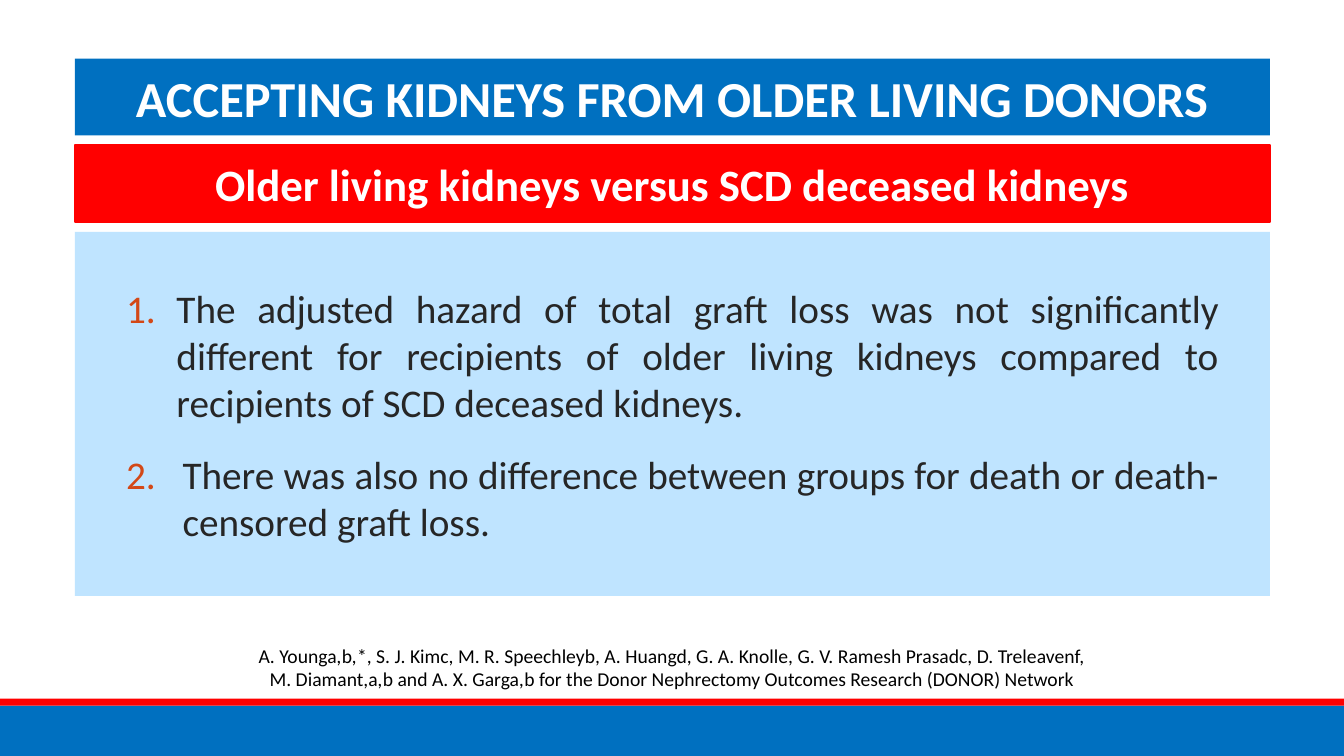
from lxml.etree import SubElement
from pptx import Presentation
from pptx.dml.color import RGBColor
from pptx.enum.shapes import MSO_SHAPE
from pptx.enum.text import MSO_ANCHOR, MSO_AUTO_SIZE, PP_ALIGN
from pptx.oxml.ns import qn
from pptx.util import Inches, Pt

BLUE, RED, PALE, WHITE = "0070C0", "FF0000", "BFE4FF", "FFFFFF"
FONT = "Calibri"

deck = Presentation()
deck.slide_width, deck.slide_height = Inches(13.33), Inches(7.5)
column, row = deck.slide_width / 100, deck.slide_height / 100
slide = deck.slides.add_slide(deck.slide_layouts[1])


def rgb(code):
    return RGBColor.from_string(code)


def style(paragraph, size, color, align, bold=False):
    paragraph.alignment = align
    paragraph.font.name = FONT
    paragraph.font.size = Pt(size)
    paragraph.font.bold = bold
    paragraph.font.color.rgb = rgb(color)


left, width = 5.58, 88.9
top, bar_height, gap = 7.75, 10.15, 1.32
pitch = bar_height + gap

for color, stripe_top, stripe_height in ((BLUE, 93.33, 6.67), (RED, 92.4, 0.93)):
    stripe = slide.shapes.add_shape(
        MSO_SHAPE.RECTANGLE, 0, int(stripe_top * row),
        deck.slide_width, int(stripe_height * row))
    stripe.shadow.inherit = False
    stripe.fill.solid()
    stripe.fill.fore_color.rgb = rgb(color)
    stripe.line.fill.background()

heading = slide.shapes.title
subheading = slide.shapes.add_shape(MSO_SHAPE.RECTANGLE, 0, 0, 0, 0)
subheading.shadow.inherit = False
subheading.line.color.rgb = rgb(RED)
subheading.line.width = Pt(1.25)

bars = (
    (heading, "ACCEPTING KIDNEYS FROM OLDER LIVING DONORS", 36, BLUE),
    (subheading, "Older living kidneys versus SCD deceased kidneys", 32, RED),
)
for index, (bar, wording, size, color) in enumerate(bars):
    bar.left, bar.top = int(left * column), int((top + index * pitch) * row)
    bar.width, bar.height = int(width * column), int(bar_height * row)
    bar.fill.solid()
    bar.fill.fore_color.rgb = rgb(color)
    frame = bar.text_frame
    frame.text = wording
    frame.word_wrap = True
    frame.auto_size = MSO_AUTO_SIZE.NONE
    frame.vertical_anchor = MSO_ANCHOR.MIDDLE
    frame.margin_left = frame.margin_right = int(3.2 * column)
    frame.margin_top = frame.margin_bottom = 0
    style(frame.paragraphs[0], size, WHITE, PP_ALIGN.CENTER, bold=True)

findings = slide.placeholders[1]
findings.left, findings.top = int(left * column), int((top + 2 * pitch) * row)
findings.width, findings.height = int(width * column), int(48.15 * row)
findings.fill.solid()
findings.fill.fore_color.rgb = rgb(PALE)
frame = findings.text_frame
frame.auto_size = MSO_AUTO_SIZE.NONE
frame.vertical_anchor = MSO_ANCHOR.TOP
frame.margin_left = frame.margin_right = int(3.8 * column)
frame.margin_top = int(6.9 * row)
frame.text = (
    "The adjusted hazard of total graft loss was not significantly different "
    "for recipients of older living kidneys compared to recipients of SCD "
    "deceased kidneys.\n"
    "There was also no difference between groups for death or "
    "death-censored graft loss.")
for number, (finding, indent, space) in enumerate(
        zip(frame.paragraphs, (0.5, 0.56), (0, 18)), start=1):
    style(finding, 28, "262626", PP_ALIGN.JUSTIFY)
    finding.space_before = Pt(space)
    properties = finding._p.get_or_add_pPr()
    properties.set("marL", str(Inches(indent)))
    properties.set("indent", str(-Inches(indent)))
    bullet_color = SubElement(properties, qn("a:buClr"))
    SubElement(bullet_color, qn("a:srgbClr"), val="D34817")
    SubElement(properties, qn("a:buFont"), typeface="+mj-lt")
    SubElement(properties, qn("a:buAutoNum"), type="arabicPeriod", startAt=str(number))
    properties.append(properties.find(qn("a:defRPr")))

authors = slide.shapes.add_textbox(
    int(17.8 * column), int(84.5 * row), int(64.4 * column), int(7.6 * row))
authors.text_frame.word_wrap = True
credit = authors.text_frame.paragraphs[0]
style(credit, 14, "000000", PP_ALIGN.CENTER)
names = (
    "A. Younga", "b",
    "*, S. J. Kimc, M. R. Speechleyb, A. Huangd, G. A. Knolle, "
    "G. V. Ramesh Prasadc, D. Treleavenf, M. Diamant,a",
    "b and A. X. Garga",
    "b for the Donor Nephrectomy Outcomes Research (DONOR) Network",
)
for index, part in enumerate(names):
    if index:
        comma = credit.add_run()
        comma.text = ","
        comma.font.italic = True
    credit.add_run().text = part

deck.save("out.pptx")
